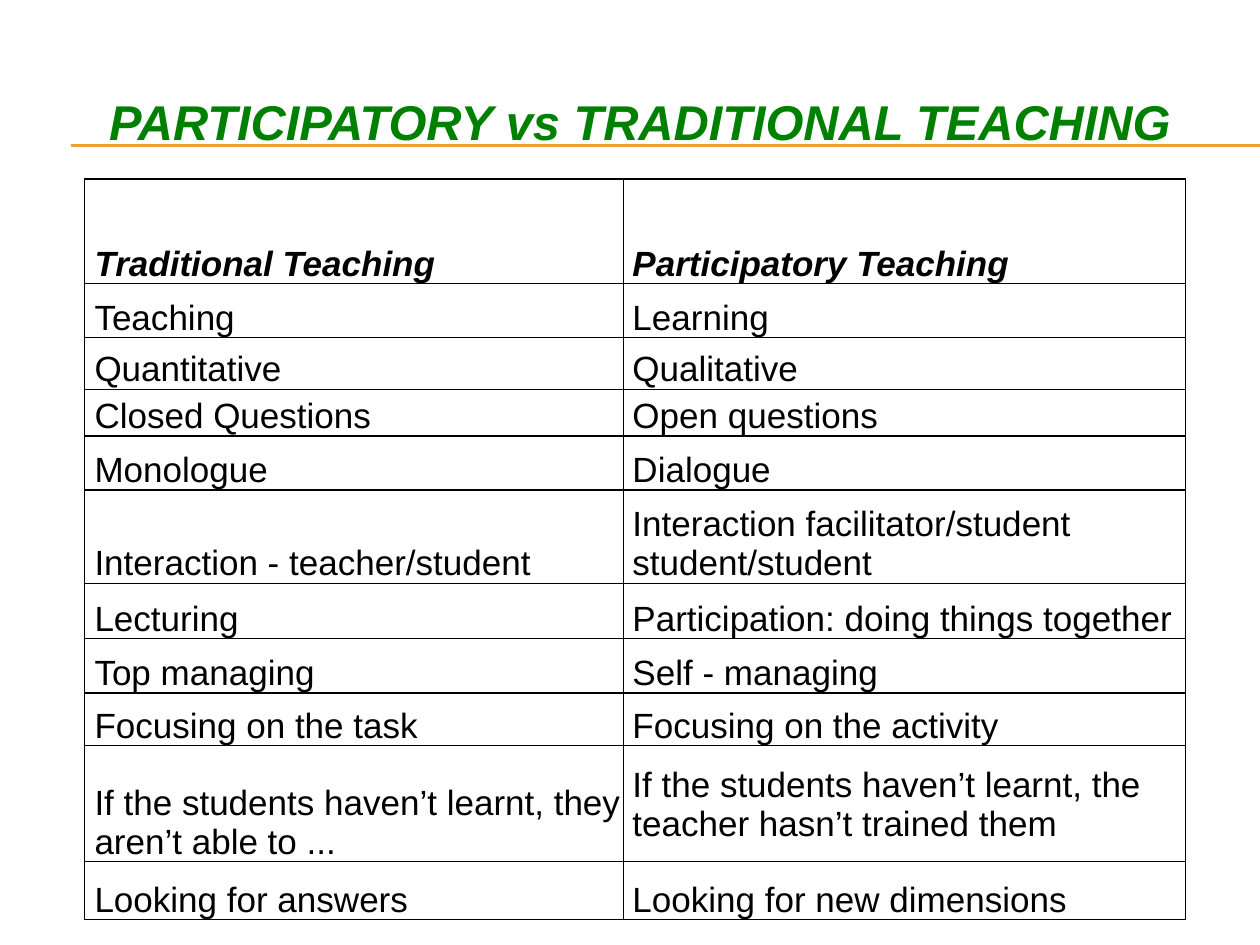
import pptx
import pptx.util
import pptx.dml.color
import pptx.enum.shapes
import pptx.enum.text
import pptx.oxml
import pptx.oxml.ns

Inches = pptx.util.Inches
Pt = pptx.util.Pt
Anchor = pptx.enum.text.MSO_ANCHOR
COLORS = {"title": "008000", "rule": "F0A22E", "text": "000000", "border": "000000"}
FORMATS = {
    "title": {"name": "Arial", "size": Pt(27.9), "bold": True, "italic": True},
    "header": {"name": "Arial", "size": Pt(20), "bold": True, "italic": True},
    "body": {"name": "Arial", "size": Pt(20), "bold": False, "italic": False},
}
ROWS = [
    (0.83, "Traditional Teaching", "Participatory Teaching"),
    (0.43, "Teaching", "Learning"),
    (0.41, "Quantitative", "Qualitative"),
    (0.37, "Closed Questions", "Open questions"),
    (0.43, "Monologue", "Dialogue"),
    (0.74, "Interaction - teacher/student", "Interaction facilitator/student student/student"),
    (0.44, "Lecturing", "Participation: doing things together"),
    (0.43, "Top managing", "Self - managing"),
    (0.42, "Focusing on the task", "Focusing on the activity"),
    (0.92, "If the students haven’t learnt, they aren’t able to ...",
     "If the students haven’t learnt, the teacher hasn’t trained them"),
    (0.46, "Looking for answers", "Looking for new dimensions"),
]
COLUMN_WIDTHS = [4.28, 4.46]
INDENTS = [0.08, 0.07]
RAISED_CELLS = {(9, 1): 0.14}


def set_values(target, values):
    for name, value in values.items():
        setattr(target, name, value)


class SlideBuilder:
    def __init__(self, page):
        self.page = page

    def color(self, name):
        return pptx.dml.color.RGBColor.from_string(COLORS[name])

    def add_text(self, frame, text, style, color):
        para = frame.paragraphs[0]
        span = para.add_run()
        span.text = text
        set_values(span.font, FORMATS[style])
        span.font.color.rgb = self.color(color)
        return para

    def rule(self, left, right, top):
        line = self.page.shapes.add_connector(
            pptx.enum.shapes.MSO_CONNECTOR.STRAIGHT,
            Inches(left), Inches(top), Inches(right), Inches(top))
        line.line.color.rgb = self.color("rule")
        line.line.width = Pt(0.75)
        line._element.spPr.append(pptx.oxml.parse_xml(
            f"<a:effectLst {pptx.oxml.ns.nsdecls('a')}/>"))

    def title(self, text, *place):
        box = self.page.shapes.add_textbox(*map(Inches, place))
        set_values(box.text_frame, {"word_wrap": True, "vertical_anchor": Anchor.MIDDLE})
        para = self.add_text(box.text_frame, text, "title", "title")
        para.alignment = pptx.enum.text.PP_ALIGN.CENTER

    def borders(self, cell):
        properties = cell._tc.get_or_add_tcPr()
        for index, side in enumerate(("lnL", "lnR", "lnT", "lnB")):
            properties.insert(index, pptx.oxml.parse_xml(
                f"<a:{side} {pptx.oxml.ns.nsdecls('a')} w=\"{Pt(1)}\"><a:solidFill>"
                f"<a:srgbClr val=\"{COLORS['border']}\"/></a:solidFill></a:{side}>"))

    def table(self, left, top):
        width = sum(COLUMN_WIDTHS)
        height = sum(row[0] for row in ROWS)
        table = self.page.shapes.add_table(
            len(ROWS), len(COLUMN_WIDTHS),
            *map(Inches, (left, top, width, height))).table
        set_values(table, {"first_row": False, "horz_banding": False})
        for column, column_width in zip(table.columns, COLUMN_WIDTHS):
            column.width = Inches(column_width)
        for row, (row_height, *texts) in enumerate(ROWS):
            table.rows[row].height = Inches(row_height)
            for column, text in enumerate(texts):
                cell = table.cell(row, column)
                set_values(cell, {
                    "margin_left": Inches(INDENTS[column]),
                    "margin_right": 0,
                    "margin_top": 0,
                    "margin_bottom": Inches(RAISED_CELLS.get((row, column), 0)),
                    "vertical_anchor": Anchor.BOTTOM,
                })
                cell.fill.background()
                self.borders(cell)
                self.add_text(cell.text_frame, text, "body" if row else "header", "text")


def main():
    deck = pptx.Presentation()
    set_values(deck, {"slide_width": Inches(10), "slide_height": Inches(7.5)})
    builder = SlideBuilder(deck.slides.add_slide(deck.slide_layouts[6]))
    for top in (1.15, 1.16):
        builder.rule(0.56, 10, top)
    builder.title("PARTICIPATORY vs TRADITIONAL TEACHING", 0.33, 0.5, 9.5, 0.92)
    builder.table(0.67, 1.42)
    deck.save("out.pptx")


if __name__ == "__main__":
    main()
